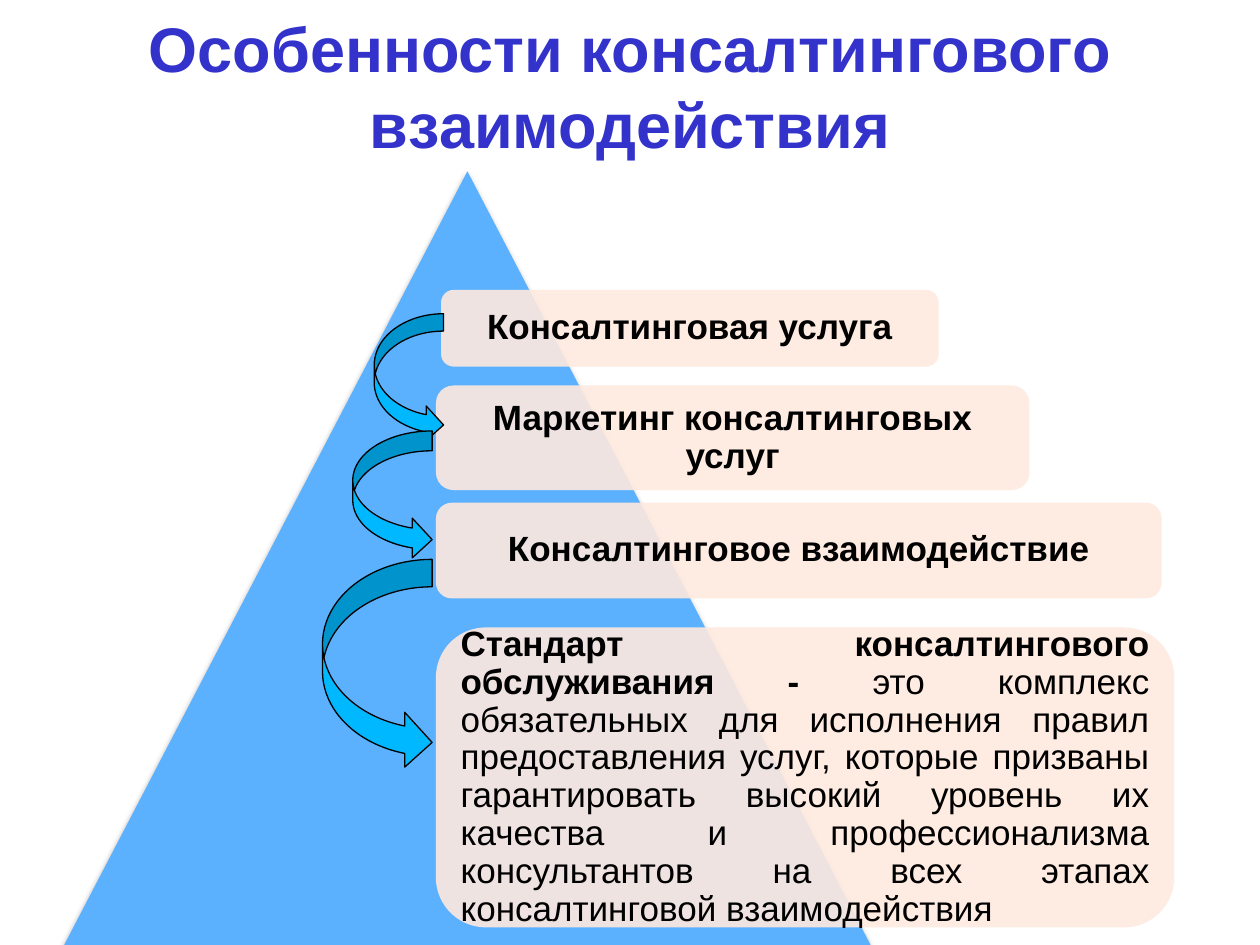
from lxml import etree
from pptx import Presentation
from pptx.dml.color import RGBColor
from pptx.enum.shapes import MSO_SHAPE
from pptx.enum.text import MSO_ANCHOR, MSO_AUTO_SIZE, PP_ALIGN
from pptx.oxml import parse_xml
from pptx.oxml.ns import qn
from pptx.util import Inches, Pt

TRIANGLE = MSO_SHAPE.ISOSCELES_TRIANGLE
ROUNDED = MSO_SHAPE.ROUNDED_RECTANGLE
CURVED_ARROW = MSO_SHAPE.CURVED_RIGHT_ARROW
MIDDLE = MSO_ANCHOR.MIDDLE
NO_AUTOFIT = MSO_AUTO_SIZE.NONE
CENTER, JUSTIFY = PP_ALIGN.CENTER, PP_ALIGN.JUSTIFY

COLORS = {
    "title": "3333CC",
    "pyramid": "5CB1FE",
    "card": "FEE9DE",
    "arrow": "00B8FF",
    "text": "000000",
}
FONT = "Arial"
SHADOW = (
    '<a:effectLst xmlns:a="http://schemas.openxmlformats.org/drawingml/2006/main">'
    '<a:outerShdw blurRad="39370" dist="22860" dir="5400000" rotWithShape="0">'
    '<a:srgbClr val="000000"><a:alpha val="35000"/></a:srgbClr>'
    "</a:outerShdw></a:effectLst>"
)


def add_text(paragraph, text, *, size=20, color="text", bold=True):
    """Append a formatted run to a paragraph."""
    run = paragraph.add_run()
    run.text = text
    run.font.name = FONT
    run.font.size = Pt(size)
    run.font.bold = bold
    run.font.color.rgb = RGBColor.from_string(COLORS[color])


class SlideBuilder:
    """Hold the colours, font and current slide, and add its elements."""

    def __init__(self, slide):
        """Keep the slide to build on."""
        self.slide = slide

    def title(self, text, box):
        """Place and fill the title placeholder."""
        heading = self.slide.shapes.title
        heading.left, heading.top, heading.width, heading.height = map(Inches, box)
        frame = heading.text_frame
        frame.word_wrap = True
        frame.auto_size = NO_AUTOFIT
        frame.vertical_anchor = MIDDLE
        frame.paragraphs[0].alignment = CENTER
        add_text(frame.paragraphs[0], text, size=36, color="title")

    def shape(self, kind, box, color):
        """Add a filled shape with no outline and no shadow."""
        shape = self.slide.shapes.add_shape(kind, *map(Inches, box))
        shape.shadow.inherit = False
        shape.fill.solid()
        shape.fill.fore_color.rgb = RGBColor.from_string(COLORS[color])
        shape.line.fill.background()
        return shape

    def pyramid(self, box):
        """Add the background triangle with its soft shadow."""
        properties = self.shape(TRIANGLE, box, "pyramid")._element.spPr
        properties.replace(properties.find(qn("a:effectLst")), parse_xml(SHADOW))

    def card(self, box, term, definition="", align=CENTER):
        """Add a translucent rounded card with a bold term."""
        card = self.shape(ROUNDED, box, "card")
        tint = card._element.spPr.find(qn("a:solidFill"))[0]
        etree.SubElement(tint, qn("a:alpha"), val="90000")
        frame = card.text_frame
        frame.word_wrap = True
        frame.vertical_anchor = MIDDLE
        frame.margin_left = frame.margin_right = Inches(0.08)
        frame.margin_top = frame.margin_bottom = Inches(0.08)
        paragraph = frame.paragraphs[0]
        paragraph.alignment = align
        paragraph.line_spacing = 0.9
        add_text(paragraph, term)
        if definition:
            add_text(paragraph, definition, bold=False)

    def arrow(self, box):
        """Add an outlined curved arrow between two cards."""
        arrow = self.shape(CURVED_ARROW, box, "arrow")
        arrow.line.color.rgb = RGBColor.from_string(COLORS["text"])
        arrow.line.width = Pt(0.75)


def main():
    """Build and save the slide."""
    deck = Presentation()
    deck.slide_width, deck.slide_height = Inches(10), Inches(7.5)
    builder = SlideBuilder(deck.slides.add_slide(deck.slide_layouts[5]))

    builder.title("Особенности консалтингового взаимодействия", (0, -0.11, 10, 1.57))
    builder.pyramid((0.51, 1.36, 6.4, 6.14))

    for term, box in (
        ("Консалтинговая услуга", (3.5, 2.3, 3.95, 0.61)),
        ("Маркетинг консалтинговых услуг", (3.46, 3.06, 4.71, 0.83)),
        ("Консалтинговое взаимодействие", (3.46, 3.99, 5.76, 0.76)),
    ):
        builder.card(box, term)
    builder.card(
        (3.46, 4.98, 5.86, 2.38),
        "Стандарт консалтингового обслуживания - ",
        "это комплекс обязательных для исполнения правил предоставления услуг, "
        "которые призваны гарантировать высокий уровень их качества и "
        "профессионализма консультантов на всех этапах консалтинговой "
        "взаимодействия",
        JUSTIFY,
    )

    for box in (
        (2.97, 2.49, 0.55, 1.02),
        (2.8, 3.42, 0.63, 1.02),
        (2.56, 4.44, 0.87, 1.67),
    ):
        builder.arrow(box)

    deck.save("out.pptx")


if __name__ == "__main__":
    main()
